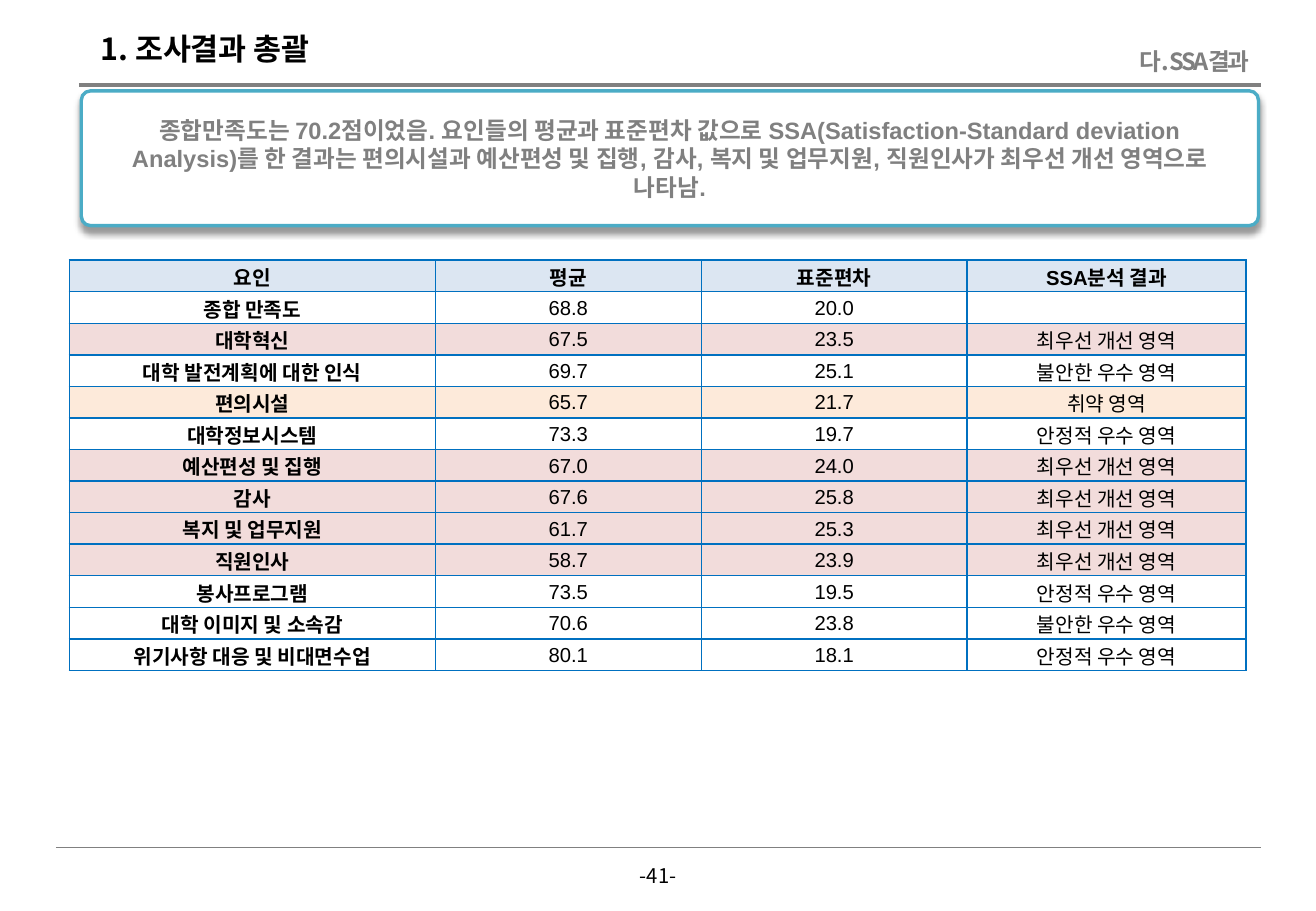
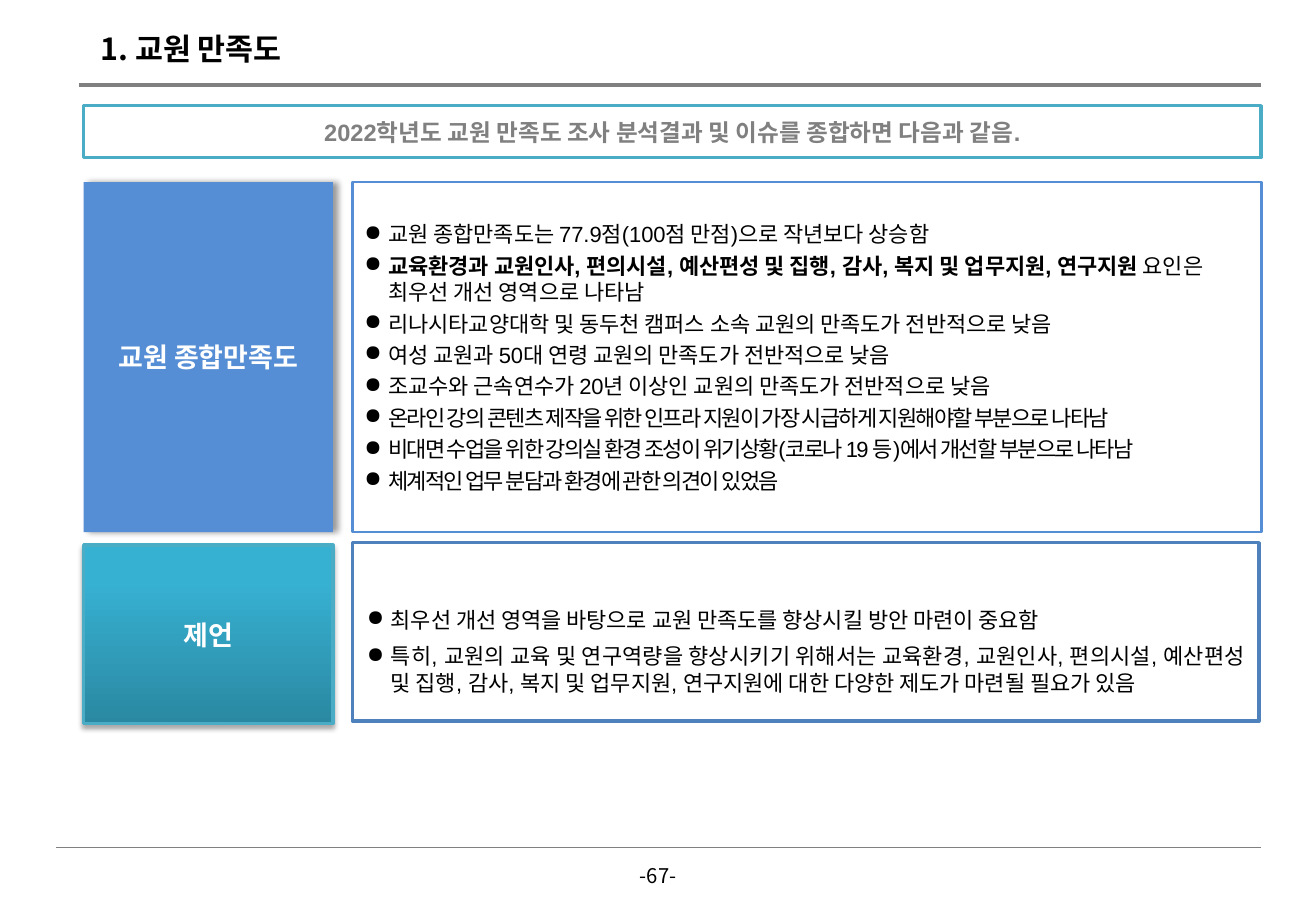
from lxml import etree
from pptx import Presentation
from pptx.dml.color import RGBColor
from pptx.enum.shapes import MSO_CONNECTOR, MSO_SHAPE
from pptx.enum.text import MSO_ANCHOR, PP_ALIGN
from pptx.oxml.ns import qn
from pptx.util import Cm, Pt

RECT, ROUND = MSO_SHAPE.RECTANGLE, MSO_SHAPE.ROUNDED_RECTANGLE
STRAIGHT = MSO_CONNECTOR.STRAIGHT
TOP, MIDDLE, BOTTOM = MSO_ANCHOR.TOP, MSO_ANCHOR.MIDDLE, MSO_ANCHOR.BOTTOM
LEFT, CENTER, RIGHT, JUST = PP_ALIGN.LEFT, PP_ALIGN.CENTER, PP_ALIGN.RIGHT, PP_ALIGN.JUSTIFY

BLACK = RGBColor(0x00, 0x00, 0x00)
WHITE = RGBColor(0xFF, 0xFF, 0xFF)
GRAY = RGBColor(0x80, 0x80, 0x80)
TEAL = RGBColor(0x4B, 0xAC, 0xC6)
DEEP = RGBColor(0x2A, 0x88, 0xA2)
AQUA = RGBColor(0x37, 0xB1, 0xD2)
BLUE = RGBColor(0x55, 0x8E, 0xD5)
NAVY = RGBColor(0x4F, 0x81, 0xBD)
GRID = RGBColor(0x00, 0x70, 0xC0)
HEAD = RGBColor(0xDC, 0xE6, 0xF2)
PINK = RGBColor(0xF2, 0xDC, 0xDB)
PEACH = RGBColor(0xFD, 0xEA, 0xDA)

LATIN, HANGUL = "Arial", "Noto Sans CJK KR"
INSET = (0.25, 0.13, 0.25, 0.13)
WIDE = (0.5, 0.1, 0.5, 0.1)
SIDES = ("margin_left", "margin_top", "margin_right", "margin_bottom")


def put(item, values):
    for name, value in values.items():
        setattr(item, name, value)


def node(parent, tag, **attrs):
    return etree.SubElement(parent, qn(tag), {k: str(v) for k, v in attrs.items()})


class Deck:
    title = dict(size=18, bold=True, face=HANGUL)
    sub = dict(size=14, bold=True, face=HANGUL, color=GRAY, gap=-1.5)
    lead = dict(size=14, bold=True, color=GRAY)
    label = dict(size=16, bold=True, color=WHITE)
    item = dict(size=13)
    page = dict(size=12, face=HANGUL)

    def __init__(self):
        self.prs = Presentation()
        put(self.prs, dict(slide_width=Cm(27.51), slide_height=Cm(19.05)))

    def start(self, title, page):
        self.slide = self.prs.slides.add_slide(self.prs.slide_layouts[6])
        self.rule(1.65, 1.78, 2)
        self.rule(1.17, 17.73, 0.5)
        self.text((1.85, 0.51, 12, 1.02), title, self.title)
        self.text((13.06, 17.93, 1.4, 0.76), page, self.page, CENTER, (0, 0.13, 0, 0))

    def rule(self, left, top, width):
        line = self.slide.shapes.add_connector(STRAIGHT, Cm(left), Cm(top), Cm(26.37), Cm(top))
        line.line.color.rgb = GRAY
        line.line.width = Pt(width)
        node(line._element.spPr, "a:effectLst")

    def run(self, para, text, size, bold=False, color=BLACK, face=LATIN, gap=0):
        run = para.add_run()
        run.text = text
        put(run.font, dict(size=Pt(size), bold=bold, name=face))
        run.font.color.rgb = color
        props = run._r.get_or_add_rPr()
        node(props, "a:ea", typeface=HANGUL)
        if gap:
            props.set("spc", str(int(gap * 100)))

    def frame(self, frame, anchor, inset):
        put(frame, dict(word_wrap=True, vertical_anchor=anchor))
        put(frame, dict(zip(SIDES, map(Cm, inset))))

    def text(self, box, text, style, align=LEFT, inset=INSET):
        frame = self.slide.shapes.add_textbox(*map(Cm, box)).text_frame
        self.frame(frame, TOP, inset)
        frame.paragraphs[0].alignment = align
        self.run(frame.paragraphs[0], text, **style)

    def box(self, kind, box, fill=None, line=None, width=2, shade=None, inset=INSET):
        shape = self.slide.shapes.add_shape(kind, *map(Cm, box))
        shape.shadow.inherit = False
        if isinstance(fill, list):
            shape.fill.gradient()
            shape.fill.gradient_angle = 90
            for stop, color, place in zip(shape.fill.gradient_stops, fill, (0, 0.8)):
                stop.color.rgb = color
                stop.position = place
        elif fill is None:
            shape.fill.background()
        else:
            shape.fill.solid()
            shape.fill.fore_color.rgb = fill
        if line is None:
            shape.line.fill.background()
        else:
            shape.line.color.rgb = line
            shape.line.width = Pt(width)
        if shade:
            blur, dist, turn, alpha = shade
            effect = shape._element.spPr.find(qn("a:effectLst"))
            outer = node(effect, "a:outerShdw", blurRad=Pt(blur), dist=Pt(dist),
                         dir=turn * 60000, rotWithShape=0)
            tint = node(outer, "a:srgbClr", val=BLACK)
            node(tint, "a:alpha", val=alpha * 1000)
        self.frame(shape.text_frame, MIDDLE, inset)
        return shape

    def panel(self, kind, box, text, style, **look):
        shape = self.box(kind, box, **look)
        para = shape.text_frame.paragraphs[0]
        para.alignment = CENTER
        self.run(para, text, **style)
        return shape

    def bullets(self, box, items, align, before=0, after=0, **look):
        frame = self.box(RECT, box, **look).text_frame
        for i, parts in enumerate(items):
            para = frame.add_paragraph() if i else frame.paragraphs[0]
            props = para._p.get_or_add_pPr()
            props.set("marL", str(Cm(0.5)))
            props.set("indent", str(-Cm(0.5)))
            node(props, "a:buChar", char="●")
            put(para, dict(alignment=align, space_before=Pt(before if i else 0),
                           space_after=Pt(after)))
            for text, extra in parts:
                self.run(para, text, **self.item, **extra)

    def cell(self, cell, text, bold, fill, anchor):
        put(cell, dict(zip(SIDES, map(Cm, (0.03, 0.03, 0.03, 0)))))
        cell.vertical_anchor = anchor
        props = cell._tc.get_or_add_tcPr()
        for side in "LRTB":
            edge = node(props, "a:ln" + side, w=Pt(1))
            node(node(edge, "a:solidFill"), "a:srgbClr", val=GRID)
        cell.fill.solid()
        cell.fill.fore_color.rgb = fill
        para = cell.text_frame.paragraphs[0]
        para.alignment = CENTER
        if text:
            self.run(para, text, 12, bold)
        else:
            node(para._p, "a:endParaRPr", sz=1200)

    def table(self, left, top, widths, height, rows, fills):
        size = map(Cm, (left, top, sum(widths), height * len(rows)))
        table = self.slide.shapes.add_table(len(rows), len(widths), *size).table
        table.horz_banding = False
        for col, width in zip(table.columns, widths):
            col.width = Cm(width)
        for r, row in enumerate(rows):
            table.rows[r].height = Cm(height)
            fill = fills.get(row[-1], WHITE) if r else HEAD
            for c, text in enumerate(row):
                self.cell(table.cell(r, c), text, r == 0 or c == 0, fill,
                          MIDDLE if r else BOTTOM)


URGENT, WEAK = "최우선 개선 영역", "취약 영역"
SHAKY, STEADY = "불안한 우수 영역", "안정적 우수 영역"
ROWS = [
    ("요인", "평균", "표준편차", "SSA분석 결과"),
    ("종합 만족도", "68.8", "20.0", ""),
    ("대학혁신", "67.5", "23.5", URGENT),
    ("대학 발전계획에 대한 인식", "69.7", "25.1", SHAKY),
    ("편의시설", "65.7", "21.7", WEAK),
    ("대학정보시스템", "73.3", "19.7", STEADY),
    ("예산편성 및 집행", "67.0", "24.0", URGENT),
    ("감사", "67.6", "25.8", URGENT),
    ("복지 및 업무지원", "61.7", "25.3", URGENT),
    ("직원인사", "58.7", "23.9", URGENT),
    ("봉사프로그램", "73.5", "19.5", STEADY),
    ("대학 이미지 및 소속감", "70.6", "23.8", SHAKY),
    ("위기사항 대응 및 비대면수업", "80.1", "18.1", STEADY),
]
BOLD, TIGHT = dict(bold=True), dict(gap=-1)
FINDINGS = [
    [("교원 종합만족도는 77.9점(100점 만점)으로 작년보다 상승함", {})],
    [("교육환경과 교원인사, 편의시설, 예산편성 및 집행, 감사, 복지 및 업무지원, 연구지원", BOLD),
     (" 요인은 최우선 개선 영역으로 나타남", {})],
    [("리나시타교양대학 및 동두천 캠퍼스 소속 교원의 만족도가 전반적으로 낮음", {})],
    [("여성 교원과 50대 연령 교원의 만족도가 전반적으로 낮음", {})],
    [("조교수와 근속연수가 20년 이상인 교원의 만족도가 전반적으로 낮음", {})],
    [("온라인 강의 콘텐츠 제작을 위한 인프라 지원이 가장 시급하게 지원해야할 부분으로 나타남", TIGHT)],
    [("비대면 수업을 위한 강의실 환경 조성이 위기상황(코로나 19 등)에서 개선할 부분으로 나타남", TIGHT)],
    [("체계적인 업무 분담과 환경에 관한 의견이 있었음", TIGHT)],
]
ADVICE = [
    [("최우선 개선 영역을 바탕으로 교원 만족도를 향상시킬 방안 마련이 중요함", {})],
    [("특히, 교원의 교육 및 연구역량을 향상시키기 위해서는 교육환경, 교원인사, 편의시설, "
      "예산편성 및 집행, 감사, 복지 및 업무지원, 연구지원에 대한 다양한 제도가 마련될 필요가 있음", {})],
]


def survey(deck):
    deck.start("1. 조사결과 총괄", "-41-")
    deck.text((21.26, 0.86, 5.11, 0.86), "다. SSA결과", deck.sub, RIGHT)
    lead = deck.panel(
        ROUND, (1.7, 1.9, 24.61, 2.82),
        "종합만족도는 70.2점이었음. 요인들의 평균과 표준편차 값으로 "
        "SSA(Satisfaction-Standard deviation Analysis)를 한 결과는 편의시설과 예산편성 및 집행, "
        "감사, 복지 및 업무지원, 직원인사가 최우선 개선 영역으로 나타남.",
        deck.lead, fill=WHITE, line=TEAL, shade=(4, 3, 90, 40), inset=WIDE)
    lead.adjustments[0] = 0.07
    deck.table(1.45, 5.44, (7.65, 5.56, 5.56, 5.83), 0.66, ROWS, {URGENT: PINK, WEAK: PEACH})


def staff(deck):
    deck.start("1. 교원 만족도", "-67-")
    deck.panel(RECT, (1.75, 2.21, 24.61, 1.09),
               "2022학년도 교원 만족도 조사 분석결과 및 이슈를 종합하면 다음과 같음.",
               deck.lead, fill=WHITE, line=TEAL, inset=WIDE)
    deck.panel(RECT, (1.75, 3.81, 5.21, 7.32), "교원 종합만족도", deck.label,
               fill=BLUE, shade=(4, 3, 0, 40))
    deck.bullets((7.37, 3.81, 19, 7.32), FINDINGS, LEFT, before=3, line=BLUE, width=1.5)
    deck.bullets((7.37, 11.35, 18.95, 3.73), ADVICE, JUST, after=6, fill=WHITE, line=NAVY,
                 inset=(0.3, 0.9, 0.3, 0.1))
    deck.panel(RECT, (1.75, 11.4, 5.21, 3.73), "제언", dict(deck.label, face=HANGUL),
               fill=[DEEP, AQUA], line=TEAL, shade=(3.1, 1.8, 90, 35))


def main():
    deck = Deck()
    survey(deck)
    staff(deck)
    deck.prs.save("out.pptx")


if __name__ == "__main__":
    main()
